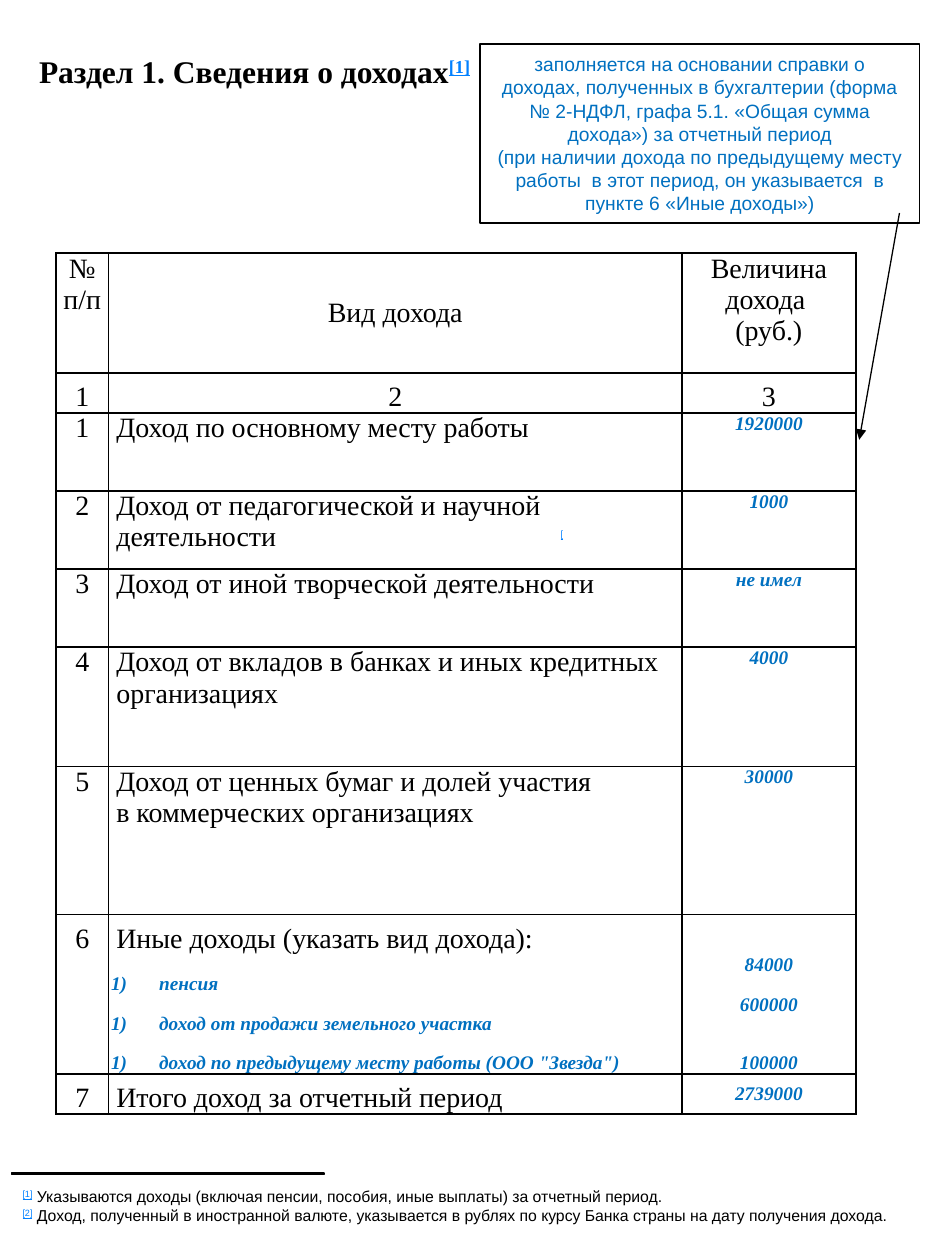
from lxml import etree
from pptx import Presentation
from pptx import util as u
from pptx.dml.color import RGBColor
from pptx.enum import shapes, text
from pptx.oxml import ns, parse_xml

Pt = u.Pt
BLACK, BLUE, LINK, WHITE = "000000", "0070C0", "0080FF", "FFFFFF"
SERIF, SANS = "Times New Roman", "Arial"
ALIGN = {"l": text.PP_ALIGN.LEFT, "c": text.PP_ALIGN.CENTER, "j": text.PP_ALIGN.JUSTIFY}
ANCHOR = {"t": text.MSO_ANCHOR.TOP, "m": text.MSO_ANCHOR.MIDDLE, "b": text.MSO_ANCHOR.BOTTOM}

BODY = dict(name=SERIF, size=Pt(16), color=BLACK)
VALUE = dict(name=SERIF, size=Pt(11), color=BLUE, bold=True, italic=True)
HEAD = dict(name=SERIF, size=Pt(18), color=BLACK, bold=True)
CALL = dict(name=SANS, size=Pt(11), color=BLUE)
NOTE = dict(name=SANS, size=Pt(9), color=BLACK, underline=False)
MARK = dict(color=LINK, underline=True, raised=True)

COLS = [30.2, 327.6, 99.4]
# height, anchors, texts; an item of the list of other income starts with "1)"
ROWS = [
    (68.4, "tmt", ["№\nп/п", "Вид дохода", "Величина дохода \n(руб.)"]),
    (22.8, "bbb", ["1", "2", "3"]),
    (44.6, "ttt", ["1", "Доход по основному месту работы", "1920000"]),
    (44.6, "ttt", ["2", "Доход от педагогической и научной деятельности", "1000"]),
    (44.6, "ttt", ["3", "Доход от иной творческой деятельности", "не имел"]),
    (68.4, "ttt", ["4", "Доход от вкладов в банках и иных кредитных организациях", "4000"]),
    (84.6, "ttt", ["5", "Доход от ценных бумаг и долей участия\nв коммерческих организациях",
                   "30000"]),
    (22.8, "bbt", ["6", "Иные доходы (указать вид дохода):", ""]),
    (22.8, "tbt", ["", "1)пенсия", "84000"]),
    (22.8, "tbt", ["", "1)доход от продажи земельного участка", "600000"]),
    (22.8, "tbb", ["", '1)доход по предыдущему месту работы (ООО "Звезда")', "100000"]),
    (22.8, "bbm", ["7", "Итого доход за отчетный период", "2739000"]),
]
OTHER = range(7, 11)


def tint(code):
    return RGBColor.from_string(code)


class Page:
    def __init__(self, slide):
        self.slide = slide
        self.edge = Pt(0.75)

    def run(self, para, words, style):
        for i, part in enumerate(words.split("\n")):
            if i:
                para.add_line_break()
            run = para.add_run()
            run.text = part
            for key, val in style.items():
                if key == "color":
                    run.font.color.rgb = tint(val)
                elif key == "raised":
                    run.font._element.set("baseline", "30000")
                else:
                    setattr(run.font, key, val)

    def prose(self, frame, paras, align="l", anchor="m", **form):
        """Fill a frame; each paragraph is a list of (words, style)."""
        form = dict(word_wrap=True, auto_size=text.MSO_AUTO_SIZE.NONE,
                    vertical_anchor=ANCHOR[anchor]) | form
        for key, val in form.items():
            setattr(frame, key, val)
        for i, runs in enumerate(paras):
            para = frame.add_paragraph() if i else frame.paragraphs[0]
            para.alignment = ALIGN[align]
            for words, style in runs:
                self.run(para, words, style)

    def title(self, box, runs):
        shape = self.slide.shapes.title
        for key, val in zip(("left", "top", "width", "height"), box):
            setattr(shape, key, Pt(val))
        self.prose(shape.text_frame, [runs], anchor="t", margin_top=Pt(5))

    def label(self, box, paras, **form):
        shape = self.slide.shapes.add_textbox(*map(Pt, box))
        self.prose(shape.text_frame, paras, **form)

    def rect(self, box, fill, paras=()):
        shape = self.slide.shapes.add_shape(shapes.MSO_SHAPE.RECTANGLE, *map(Pt, box))
        shape.shadow.inherit = False
        shape.fill.solid()
        shape.fill.fore_color.rgb = tint(fill)
        shape.line.color.rgb = tint(BLACK)
        shape.line.width = self.edge
        self.prose(shape.text_frame, paras, align="c")

    def arrow(self, *ends):
        line = self.slide.shapes.add_connector(shapes.MSO_CONNECTOR.STRAIGHT, *map(Pt, ends))
        line.line.color.rgb = tint(BLACK)
        line.line.width = self.edge
        etree.SubElement(line.line._get_or_add_ln(), ns.qn("a:tailEnd"), type="triangle")
        etree.SubElement(line._element.spPr, ns.qn("a:effectLst"))

    def border(self, cell, bare):
        """Draw the four sides of a cell, save those named in bare."""
        props = cell._tc.get_or_add_tcPr()
        for side in "LRTB":
            paint = "<a:noFill/>" if side in bare else (
                f'<a:solidFill><a:srgbClr val="{BLACK}"/></a:solidFill>')
            props.append(parse_xml(
                f'<a:ln{side} {ns.nsdecls("a")} w="{Pt(1)}">{paint}</a:ln{side}>'))
        cell.fill.background()

    def indent(self, para, left, listed):
        props = para._p.get_or_add_pPr()
        props.set("marL", str(Pt(left)))
        if listed:
            props.set("indent", str(-Pt(left)))
            etree.SubElement(props, ns.qn("a:buFont"), typeface=SERIF)
            etree.SubElement(props, ns.qn("a:buAutoNum"), type="arabicParenR")

    def cell(self, cell, row, col, words, anchor):
        listed = words.startswith("1)")
        style = VALUE if listed or (col == 2 and row > 1) else BODY
        form = dict(margin_left=Pt(1.44), margin_right=Pt(1.44), margin_top=0,
                    margin_bottom=0, vertical_anchor=ANCHOR[anchor])
        for key, val in form.items():
            setattr(cell, key, val)
        para = cell.text_frame.paragraphs[0]
        left = col == 1 and row > 1
        para.alignment = ALIGN["l" if left else "c"]
        if left:
            self.indent(para, 27.4 if listed else 3, listed)
        if words:
            self.run(para, words.removeprefix("1)") if listed else words, style)
        bare = "T" * (row in OTHER[1:]) + "B" * (row in OTHER[:-1])
        self.border(cell, bare)

    def table(self, left, top):
        high = [row[0] for row in ROWS]
        table = self.slide.shapes.add_table(
            len(ROWS), len(COLS), *map(Pt, (left, top, sum(COLS), sum(high)))).table
        table.first_row = table.horz_banding = False
        for col, width in zip(table.columns, COLS):
            col.width = Pt(width)
        for r, (height, anchors, texts) in enumerate(ROWS):
            table.rows[r].height = Pt(height)
            for c, words in enumerate(texts):
                self.cell(table.cell(r, c), r, c, words, anchors[c])


def main():
    deck = Presentation()
    deck.slide_width, deck.slide_height = Pt(540), Pt(720)
    page = Page(deck.slides.add_slide(deck.slide_layouts[5]))

    page.title((15.1, 24.5, 499, 53.3),
               [("Раздел 1. Сведения о доходах", HEAD), ("[1]", HEAD | MARK)])
    page.rect((274.3, 25.2, 251.3, 102.2), WHITE, [
        [("заполняется на основании справки о доходах, полученных в бухгалтерии "
          "(форма № 2-НДФЛ, графа 5.1. «Общая сумма дохода») за отчетный период", CALL)],
        [("(при наличии дохода по предыдущему месту работы  в этот период, "
          "он указывается  в пункте 6 «Иные доходы»)", CALL)],
    ])
    page.table(31.9, 144.7)
    page.arrow(514, 121.7, 491, 251.3)
    page.rect((6.5, 670.3, 178.6, 0.7), BLACK)
    notes = [
        "Указываются доходы (включая пенсии, пособия, иные выплаты) за отчетный период.",
        "Доход, полученный в иностранной валюте, указывается в рублях по курсу "
        "Банка страны на дату получения дохода.",
    ]
    page.label((5.8, 671, 540, 36), [
        [(f"[{n}]", NOTE | MARK), (" " + words, NOTE)] for n, words in enumerate(notes, 1)
    ], align="j")
    page.label((313.2, 297.4, 15.8, 18), [[("[", NOTE | MARK)]], align="j", word_wrap=False)
    deck.save("out.pptx")


if __name__ == "__main__":
    main()
